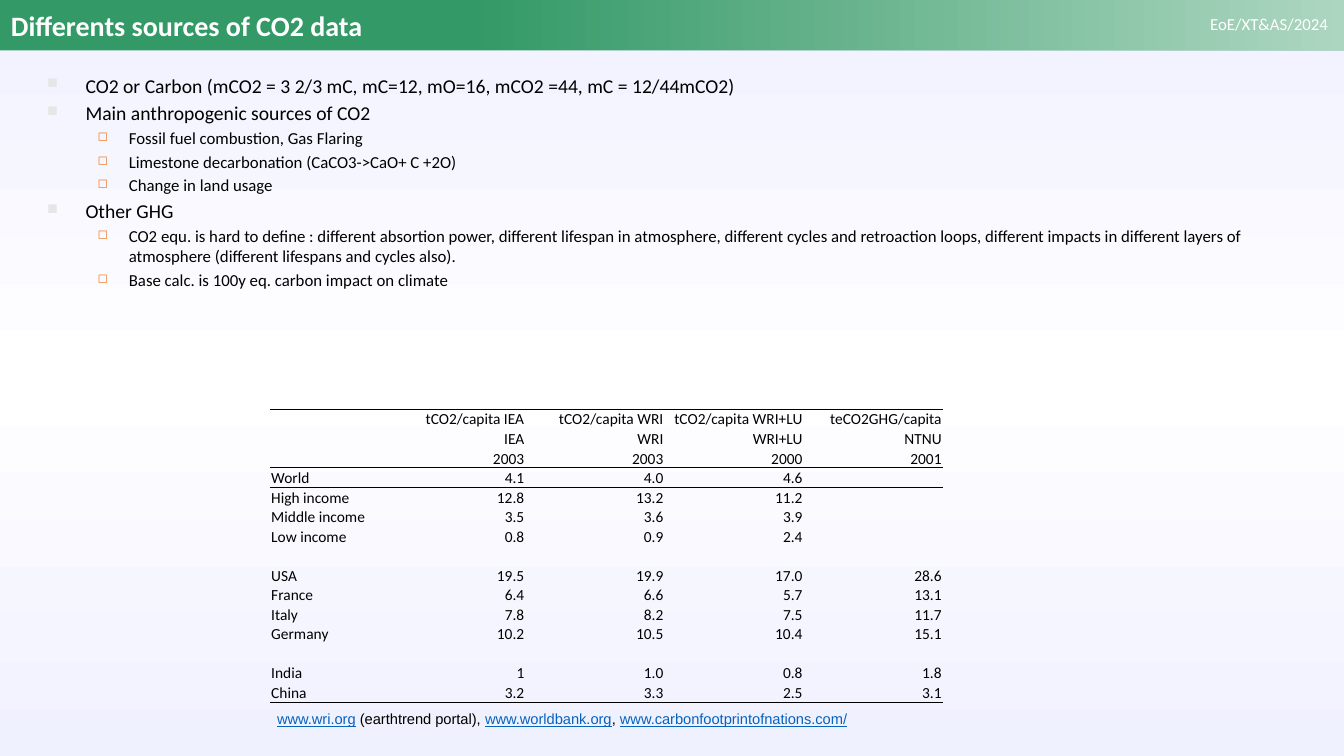
from copy import deepcopy

from lxml.etree import SubElement
from pptx import Presentation
from pptx.dml.color import RGBColor
from pptx.enum.shapes import MSO_SHAPE
from pptx.enum.text import MSO_ANCHOR, PP_ALIGN
from pptx.oxml.ns import qn
from pptx.util import Inches, Pt

BLACK = RGBColor(0x00, 0x00, 0x00)
WHITE = RGBColor(0xFF, 0xFF, 0xFF)
GREEN = RGBColor(0x33, 0x99, 0x66)
PALE_GREEN = RGBColor(0xAD, 0xD6, 0xC1)
LAVENDER = RGBColor(0xF0, 0xF1, 0xFE)
BULLET_GRAY = RGBColor(0xE7, 0xE6, 0xE6)
BULLET_ORANGE = RGBColor(0xED, 0x7D, 0x31)
LINK_BLUE = RGBColor(0x05, 0x63, 0xC1)
NO_GRID_STYLE = "{2D5ABB26-0587-4C30-8999-92F81FD0307C}"

# Bullet level: left margin, hanging indent, space before, size, symbol, colour
LEVELS = [
    (0.38, 0.38, 2.8, 14, "■", BULLET_GRAY),
    (0.81, 0.31, 2.4, 12, "◻", BULLET_ORANGE),
]
BULLETS = [
    (0, "CO2 or Carbon (mCO2 = 3 2/3 mC, mC=12, mO=16, mCO2 =44, mC = 12/44mCO2)"),
    (0, "Main anthropogenic sources of CO2"),
    (1, "Fossil fuel combustion, Gas Flaring"),
    (1, "Limestone decarbonation (CaCO3->CaO+ C +2O)"),
    (1, "Change in land usage"),
    (0, "Other GHG"),
    (1, "CO2 equ. is hard to define : different absortion power, different lifespan "
        "in atmosphere, different cycles and retroaction loops, different impacts in "
        "different layers of atmosphere (different lifespans and cycles also)."),
    (1, "Base calc. is 100y eq. carbon impact on climate"),
]
EMISSIONS = [
    ["", "tCO2/capita IEA", "tCO2/capita WRI", "tCO2/capita WRI+LU", "teCO2GHG/capita"],
    ["", "IEA", "WRI", "WRI+LU", "NTNU"],
    ["", "2003", "2003", "2000", "2001"],
    ["World", "4.1", "4.0", "4.6", ""],
    ["High income", "12.8", "13.2", "11.2", ""],
    ["Middle income", "3.5", "3.6", "3.9", ""],
    ["Low income", "0.8", "0.9", "2.4", ""],
    [""] * 5,
    ["USA", "19.5", "19.9", "17.0", "28.6"],
    ["France", "6.4", "6.6", "5.7", "13.1"],
    ["Italy", "7.8", "8.2", "7.5", "11.7"],
    ["Germany", "10.2", "10.5", "10.4", "15.1"],
    [""] * 5,
    ["India", "1", "1.0", "0.8", "1.8"],
    ["China", "3.2", "3.3", "2.5", "3.1"],
]
RULES = {0: ["lnT"], 2: ["lnB"], 3: ["lnT"], 14: ["lnB"]}
SOURCES = [
    ("www.wri.org", True),
    (" (earthtrend portal), ", False),
    ("www.worldbank.org", True),
    (", ", False),
    ("www.carbonfootprintofnations.com/", True),
]


def add_text(paragraph, text, size=12, color=BLACK, font="Calibri", bold=False, underline=False):
    run = paragraph.add_run()
    run.text = text
    run.font.name = font
    run.font.size = Pt(size)
    run.font.bold = bold
    run.font.underline = underline
    run.font.color.rgb = color


def add_bullet(paragraph, level):
    left, hanging, _, _, symbol, color = LEVELS[level]
    properties = paragraph._p.get_or_add_pPr()
    properties.set("marL", str(Inches(left)))
    properties.set("indent", str(-Inches(hanging)))
    bullet_color = SubElement(properties, qn("a:buClr"))
    SubElement(bullet_color, qn("a:srgbClr"), val=str(color))
    SubElement(properties, qn("a:buSzPct"), val="75000")
    SubElement(properties, qn("a:buChar"), char=symbol)


def add_border(cell, edge):
    line = SubElement(cell._tc.get_or_add_tcPr(), qn(f"a:{edge}"), w=str(Pt(0.75)))
    SubElement(SubElement(line, qn("a:solidFill")), qn("a:srgbClr"), val=str(BLACK))


def paint_gradient(fill, owner, colors, angle):
    """Spread the colours evenly over the fill that owner holds."""
    fill.gradient()
    fill.gradient_angle = angle
    stop_list = owner.find(".//" + qn("a:gsLst"))
    for _ in colors[2:]:
        stop_list.append(deepcopy(stop_list[0]))
    for index, (stop, color) in enumerate(zip(fill.gradient_stops, colors)):
        stop.color.rgb = color
        stop.position = index / (len(colors) - 1)


class SlideBuilder:
    def __init__(self, slide):
        self.slide = slide

    def background(self, *colors):
        paint_gradient(self.slide.background.fill, self.slide.element, colors, 270)

    def band(self, left, width, *colors):
        shape = self.slide.shapes.add_shape(
            MSO_SHAPE.RECTANGLE, Inches(left), 0, Inches(width), Inches(0.5))
        shape.shadow.inherit = False
        shape.line.fill.background()
        if len(colors) > 1:
            paint_gradient(shape.fill, shape.element, colors, 0)
        else:
            shape.fill.solid()
            shape.fill.fore_color.rgb = colors[0]

    def text_box(self, left, top, width, height, anchor=MSO_ANCHOR.TOP):
        box = self.slide.shapes.add_textbox(*map(Inches, (left, top, width, height)))
        box.text_frame.word_wrap = True
        box.text_frame.vertical_anchor = anchor
        return box.text_frame

    def bullet_list(self, frame, items):
        for index, (level, text) in enumerate(items):
            paragraph = frame.add_paragraph() if index else frame.paragraphs[0]
            _, _, space, size, _, _ = LEVELS[level]
            paragraph.level = level
            add_bullet(paragraph, level)
            paragraph.space_before = Pt(space if index else 0)
            add_text(paragraph, text, size)

    def table(self, left, top, widths, row_height, rows):
        frame = self.slide.shapes.add_table(
            len(rows), len(widths), Inches(left), Inches(top),
            Inches(sum(widths)), Inches(row_height * len(rows)))
        table = frame.table
        table.first_row = table.horz_banding = False
        frame.element.find(".//" + qn("a:tableStyleId")).text = NO_GRID_STYLE
        for column, width in zip(table.columns, widths):
            column.width = Inches(width)
        for row_index, values in enumerate(rows):
            table.rows[row_index].height = Inches(row_height)
            for column_index, text in enumerate(values):
                cell = table.cell(row_index, column_index)
                self.table_cell(cell, text, column_index > 0, RULES.get(row_index, []))

    def table_cell(self, cell, text, is_value, edges):
        cell.margin_left = cell.margin_right = cell.margin_top = Inches(0.01)
        cell.margin_bottom = 0
        cell.vertical_anchor = MSO_ANCHOR.BOTTOM
        for edge in edges:
            add_border(cell, edge)
        cell.fill.background()
        paragraph = cell.text_frame.paragraphs[0]
        paragraph.alignment = PP_ALIGN.RIGHT if is_value else PP_ALIGN.LEFT
        if text:
            add_text(paragraph, text, 11)
        else:
            SubElement(paragraph._p, qn("a:endParaRPr"), sz="1100")


def main():
    presentation = Presentation()
    presentation.slide_width = Inches(13.33)
    presentation.slide_height = Inches(7.5)
    builder = SlideBuilder(presentation.slides.add_slide(presentation.slide_layouts[6]))

    builder.background(LAVENDER, WHITE, LAVENDER)
    builder.band(0, 13.33, GREEN)
    builder.band(4.67, 8.66, GREEN, PALE_GREEN)

    course = builder.text_box(11.81, 0.09, 1.46, 0.31).paragraphs[0]
    course.alignment = PP_ALIGN.RIGHT
    add_text(course, "EoE/XT&AS/2024", color=WHITE)
    title = builder.text_box(0.01, 0, 12, 0.5, MSO_ANCHOR.MIDDLE).paragraphs[0]
    add_text(title, "Differents sources of CO2 data", 20, WHITE, bold=True)

    builder.bullet_list(builder.text_box(0.37, 0.68, 12.6, 6.61), BULLETS)
    builder.table(2.68, 4.06, [1.15] + [1.38] * 4, 0.19, EMISSIONS)

    sources = builder.text_box(2.65, 6.99, 7.56, 0.28).paragraphs[0]
    for text, is_link in SOURCES:
        add_text(sources, text, 10.5, LINK_BLUE if is_link else BLACK, "Arial",
                 underline=is_link)

    presentation.save("out.pptx")


if __name__ == "__main__":
    main()
